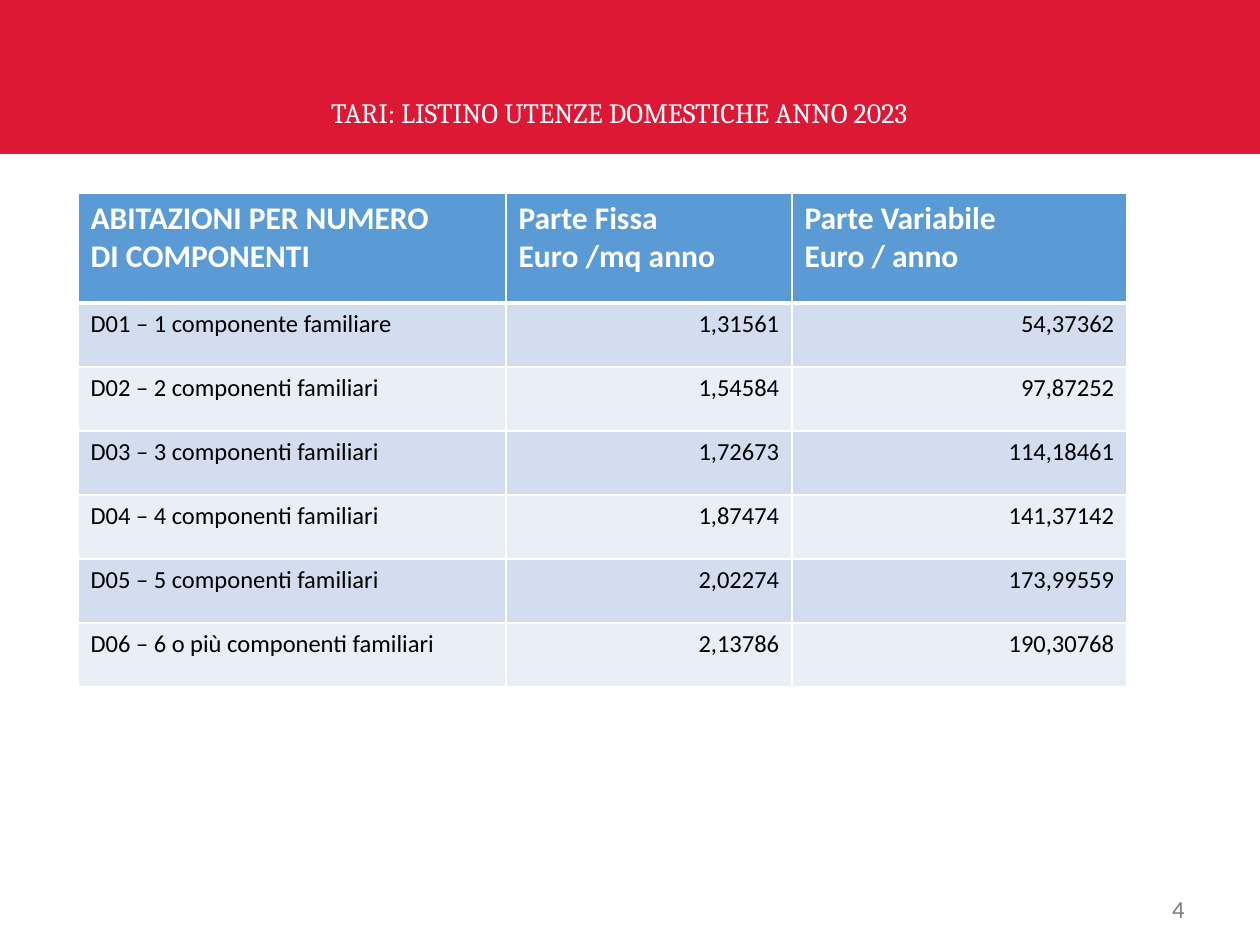
import dataclasses

import lxml.etree
import pptx
import pptx.dml.color
import pptx.enum.shapes
import pptx.enum.text
import pptx.oxml.ns
import pptx.util

EMU_PER_PX = 914400 // 126
ALIGN = pptx.enum.text.PP_ALIGN
ANCHOR = pptx.enum.text.MSO_ANCHOR


@dataclasses.dataclass(frozen=True)
class Theme:
    red: str = "DD1835"
    white: str = "FFFFFF"
    black: str = "000000"
    grey: str = "808080"
    header: str = "5B9BD5"
    bands: tuple = ("D2DEEF", "EAEFF7")
    title_font: str = "Cambria"
    body_font: str = "Calibri"
    title_size: int = 16
    header_size: int = 18
    body_size: int = 14
    thin_rule: int = 1
    thick_rule: int = 3


@dataclasses.dataclass(frozen=True)
class Style:
    font: str
    size: int
    color: str
    bold: bool = False
    align: ALIGN = ALIGN.LEFT


@dataclasses.dataclass(frozen=True)
class Area:
    left: int
    top: int
    width: int
    height: int

    def emu(self) -> list:
        return [px(value) for value in dataclasses.astuple(self)]


@dataclasses.dataclass(frozen=True)
class Tariff:
    household: str
    fixed: str
    variable: str


THEME = Theme()
HEADINGS = (
    "ABITAZIONI PER NUMERO\nDI COMPONENTI",
    "Parte Fissa\nEuro /mq anno",
    "Parte Variabile\nEuro / anno",
)
TARIFFS = (
    Tariff("D01 – 1 componente familiare", "1,31561", "54,37362"),
    Tariff("D02 – 2 componenti familiari", "1,54584", "97,87252"),
    Tariff("D03 – 3 componenti familiari", "1,72673", "114,18461"),
    Tariff("D04 – 4 componenti familiari", "1,87474", "141,37142"),
    Tariff("D05 – 5 componenti familiari", "2,02274", "173,99559"),
    Tariff("D06 – 6 o più componenti familiari", "2,13786", "190,30768"),
)
COLUMN_WIDTHS = (428, 286, 335)
HEADER_HEIGHT = 110
ROW_HEIGHT = 64


def px(value: int) -> int:
    return pptx.util.Emu(value * EMU_PER_PX)


def rgb(color: str) -> pptx.dml.color.RGBColor:
    return pptx.dml.color.RGBColor.from_string(color)


def write(frame, text: str, style: Style) -> None:
    frame.text = text
    for para in frame.paragraphs:
        para.alignment = style.align
        para.font.name = style.font
        para.font.size = pptx.util.Pt(style.size)
        para.font.bold = style.bold
        para.font.color.rgb = rgb(style.color)


def add_band(page, area: Area, color: str) -> None:
    band = page.shapes.add_shape(pptx.enum.shapes.MSO_SHAPE.RECTANGLE, *area.emu())
    band.shadow.inherit = False
    band.fill.solid()
    band.fill.fore_color.rgb = rgb(color)
    band.line.fill.background()


def add_text(page, area: Area, text: str, style: Style, anchor: ANCHOR,
             spacing: float = 1.0) -> None:
    box = page.shapes.add_textbox(*area.emu())
    box.text_frame.word_wrap = True
    box.text_frame.vertical_anchor = anchor
    write(box.text_frame, text, style)
    box.text_frame.paragraphs[0].line_spacing = spacing


def set_borders(cell, top: int, bottom: int) -> None:
    properties = cell._tc.get_or_add_tcPr()
    widths = {"lnL": THEME.thin_rule, "lnR": THEME.thin_rule, "lnT": top, "lnB": bottom}
    # Border lines come before the fill in the cell properties
    for index, (side, width) in enumerate(widths.items()):
        line = lxml.etree.Element(pptx.oxml.ns.qn(f"a:{side}"), w=str(pptx.util.Pt(width)))
        solid = lxml.etree.SubElement(line, pptx.oxml.ns.qn("a:solidFill"))
        lxml.etree.SubElement(solid, pptx.oxml.ns.qn("a:srgbClr"), val=THEME.white)
        properties.insert(index, line)


def fill_cell(cell, text: str, style: Style, fill: str, top: int, bottom: int) -> None:
    write(cell.text_frame, text, style)
    cell.fill.solid()
    cell.fill.fore_color.rgb = rgb(fill)
    set_borders(cell, top, bottom)


def add_tariff_table(page, left: int, top: int) -> None:
    heights = [HEADER_HEIGHT] + [ROW_HEIGHT] * len(TARIFFS)
    area = Area(left, top, sum(COLUMN_WIDTHS), sum(heights))
    table = page.shapes.add_table(len(heights), len(COLUMN_WIDTHS), *area.emu()).table
    for column, width in zip(table.columns, COLUMN_WIDTHS):
        column.width = px(width)
    for row, height in zip(table.rows, heights):
        row.height = px(height)

    # Header row
    heading = Style(THEME.body_font, THEME.header_size, THEME.white, bold=True)
    for column, text in enumerate(HEADINGS):
        fill_cell(table.cell(0, column), text, heading, THEME.header,
                  THEME.thin_rule, THEME.thick_rule)

    # Tariff rows in alternating bands, figures to the right
    label = Style(THEME.body_font, THEME.body_size, THEME.black)
    figure = dataclasses.replace(label, align=ALIGN.RIGHT)
    for row, tariff in enumerate(TARIFFS, start=1):
        fill = THEME.bands[(row - 1) % len(THEME.bands)]
        rule = THEME.thick_rule if row == 1 else THEME.thin_rule
        for column, text in enumerate(dataclasses.astuple(tariff)):
            fill_cell(table.cell(row, column), text, figure if column else label,
                      fill, rule, THEME.thin_rule)


def main() -> None:
    deck = pptx.Presentation()
    deck.slide_width, deck.slide_height = px(1260), px(945)
    page = deck.slides.add_slide(deck.slide_layouts[6])

    # Title band
    add_band(page, Area(0, 0, 1260, 154), THEME.red)
    title = Style(THEME.title_font, THEME.title_size, THEME.white, align=ALIGN.CENTER)
    add_text(page, Area(203, 76, 833, 60), "TARI: LISTINO UTENZE DOMESTICHE ANNO 2023",
             title, ANCHOR.BOTTOM, spacing=0.9)

    # Page number
    number = Style(THEME.body_font, THEME.body_size, THEME.grey, align=ALIGN.RIGHT)
    add_text(page, Area(903, 890, 294, 37), "4", number, ANCHOR.MIDDLE)

    # Price list
    add_tariff_table(page, 78, 193)
    deck.save("out.pptx")


if __name__ == "__main__":
    main()
